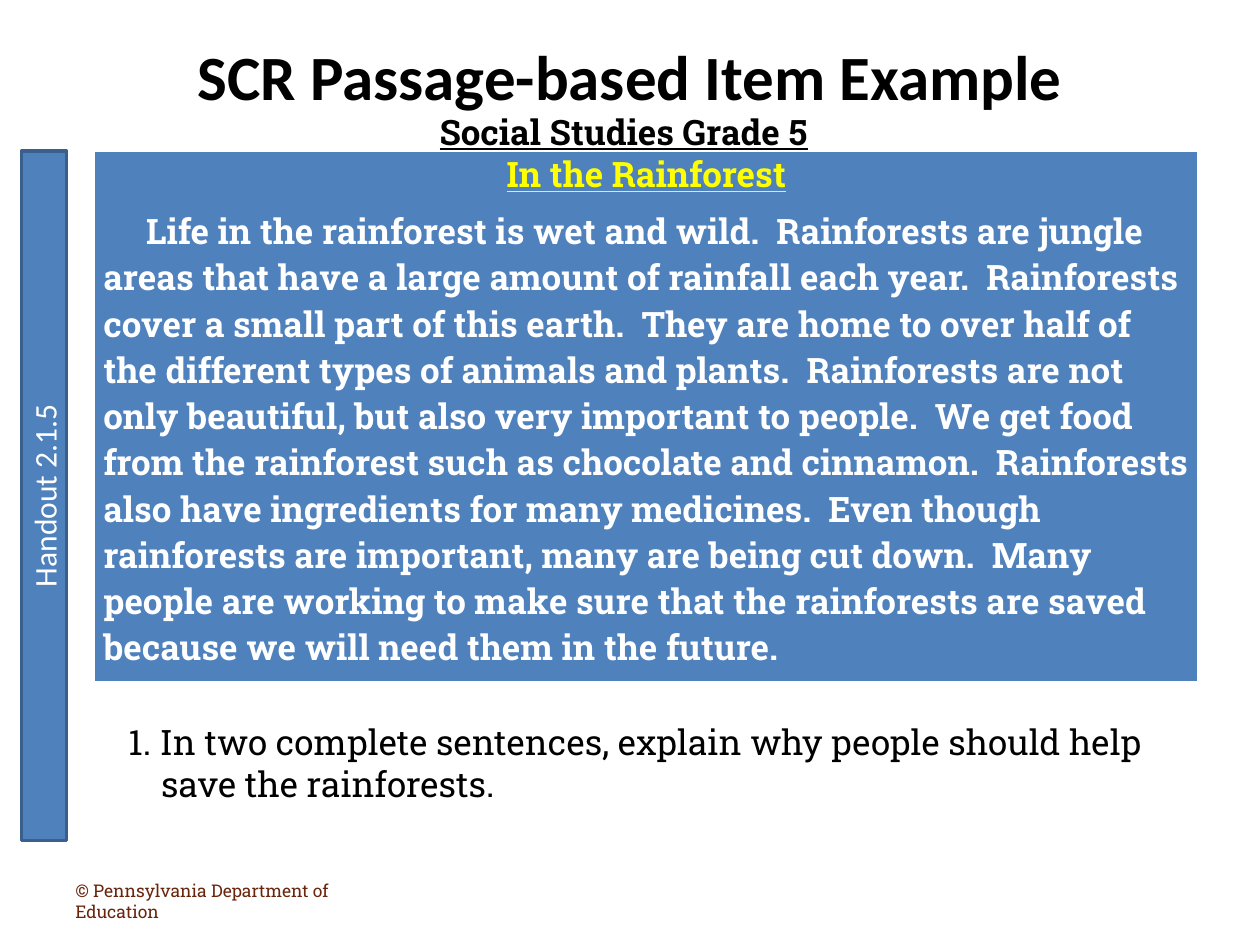
from dataclasses import dataclass
from typing import Optional

from lxml import etree
from pptx import Presentation
from pptx.dml.color import RGBColor
from pptx.enum import shapes, text
from pptx.oxml.ns import qn
from pptx.util import Inches, Pt

BLACK = RGBColor(0x00, 0x00, 0x00)
WHITE = RGBColor(0xFF, 0xFF, 0xFF)
YELLOW = RGBColor(0xFF, 0xFF, 0x00)
BLUE = RGBColor(0x4F, 0x81, 0xBD)
DARK_BLUE = RGBColor(0x3A, 0x5F, 0x8C)
BROWN = RGBColor(0x69, 0x24, 0x0C)

HEADING_FONT = "Calibri"
BODY_FONT = "Roboto Slab"
CENTER = text.PP_ALIGN.CENTER
MIDDLE = text.MSO_ANCHOR.MIDDLE

PASSAGE = (
    "Life in the rainforest is wet and wild.  Rainforests are jungle areas that "
    "have a large amount of rainfall each year.  Rainforests cover a small part of "
    "this earth.  They are home to over half of the different types of animals and "
    "plants.  Rainforests are not only beautiful, but also very important to people.  "
    "We get food from the rainforest such as chocolate and cinnamon.  Rainforests also "
    "have ingredients for many medicines.  Even though rainforests are important, many "
    "are being cut down.  Many people are working to make sure that the rainforests are "
    "saved because we will need them in the future."
)


@dataclass
class Para:
    text: str
    size: float = 20
    font: str = BODY_FONT
    color: RGBColor = BLACK
    bold: bool = False
    underline: bool = False
    align: Optional[text.PP_ALIGN] = None
    line_spacing: Optional[float] = None
    space_after: float = 0
    margin: float = 0
    indent: float = 0


@dataclass
class Label:
    left: float
    top: float
    width: float
    height: float
    para: Para
    anchor: text.MSO_ANCHOR = text.MSO_ANCHOR.TOP
    wrap: bool = True


def write(p, para: Para) -> None:
    p.text = para.text
    p.alignment = para.align
    p.line_spacing = para.line_spacing
    p.space_after = Pt(para.space_after)
    p.font.size = Pt(para.size)
    p.font.name = para.font
    p.font.bold = para.bold
    p.font.underline = para.underline
    p.font.color.rgb = para.color
    if para.indent:
        pPr = p._p.get_or_add_pPr()
        pPr.set("marL", str(Inches(para.margin)))
        pPr.set("indent", str(Inches(para.indent)))


def add_label(s, label: Label) -> None:
    box = s.shapes.add_textbox(Inches(label.left), Inches(label.top),
                               Inches(label.width), Inches(label.height))
    tf = box.text_frame
    tf.word_wrap = label.wrap
    tf.vertical_anchor = label.anchor
    write(tf.paragraphs[0], label.para)


def add_border(cell, side: str, width: float) -> None:
    tcPr = cell._tc.get_or_add_tcPr()
    ln = etree.Element(qn(f"a:{side}"), w=str(Pt(width)))
    fill = etree.SubElement(ln, qn("a:solidFill"))
    etree.SubElement(fill, qn("a:srgbClr"), val=str(WHITE))
    tcPr.append(ln)


def add_passage(s, paras: list[Para]) -> None:
    frame = s.shapes.add_table(1, 1, Inches(0.75), Inches(1.2), Inches(8.76), Inches(4.22))
    cell = frame.table.cell(0, 0)
    cell.margin_left = cell.margin_right = Inches(0.07)
    cell.margin_top = cell.margin_bottom = 0
    for side, width in (("lnL", 1), ("lnR", 1), ("lnT", 1), ("lnB", 3)):
        add_border(cell, side, width)
    cell.fill.solid()
    cell.fill.fore_color.rgb = BLUE
    tf = cell.text_frame
    for i, para in enumerate(paras):
        write(tf.add_paragraph() if i else tf.paragraphs[0], para)


def add_side_tab(s, para: Para) -> None:
    sp = s.shapes.add_shape(shapes.MSO_SHAPE.RECTANGLE, Inches(0.17), Inches(1.2),
                            Inches(0.36), Inches(5.47))
    sp.shadow.inherit = False
    sp.fill.solid()
    sp.fill.fore_color.rgb = BLUE
    sp.line.color.rgb = DARK_BLUE
    sp.line.width = Pt(2)
    tf = sp.text_frame
    tf.vertical_anchor = MIDDLE
    tf._txBody.bodyPr.set("vert", "vert270")
    write(tf.paragraphs[0], para)


def main() -> None:
    prs = Presentation()
    prs.slide_width, prs.slide_height = Inches(10), Inches(7.5)
    s = prs.slides.add_slide(prs.slide_layouts[6])

    # Title
    add_label(s, Label(0, 0.11, 10, 0.97, Para("SCR Passage-based Item Example", 36, HEADING_FONT,
                                               bold=True, align=CENTER), MIDDLE))

    # Reading passage
    add_passage(s, [
        Para("In the Rainforest", color=YELLOW, bold=True, underline=True,
             align=CENTER, space_after=6),
        Para(PASSAGE, color=WHITE, bold=True, indent=0.34),
    ])

    # Subject, question and copyright line
    for label in (
        Label(3.39, 0.66, 3.26, 0.55, Para("Social Studies Grade 5", bold=True, underline=True,
                                           line_spacing=1.5, space_after=10), wrap=False),
        Label(0.92, 5.67, 8.49, 0.77,
              Para("1. In two complete sentences, explain why people should help "
                   "save the rainforests.", margin=0.26, indent=-0.26)),
        Label(0.5, 6.95, 2.33, 0.4,
              Para("© Pennsylvania Department of Education", 10, color=BROWN), MIDDLE),
    ):
        add_label(s, label)

    # Handout tab
    add_side_tab(s, Para("Handout 2.1.5", 18, HEADING_FONT, color=WHITE, align=CENTER))

    prs.save("out.pptx")


if __name__ == "__main__":
    main()
